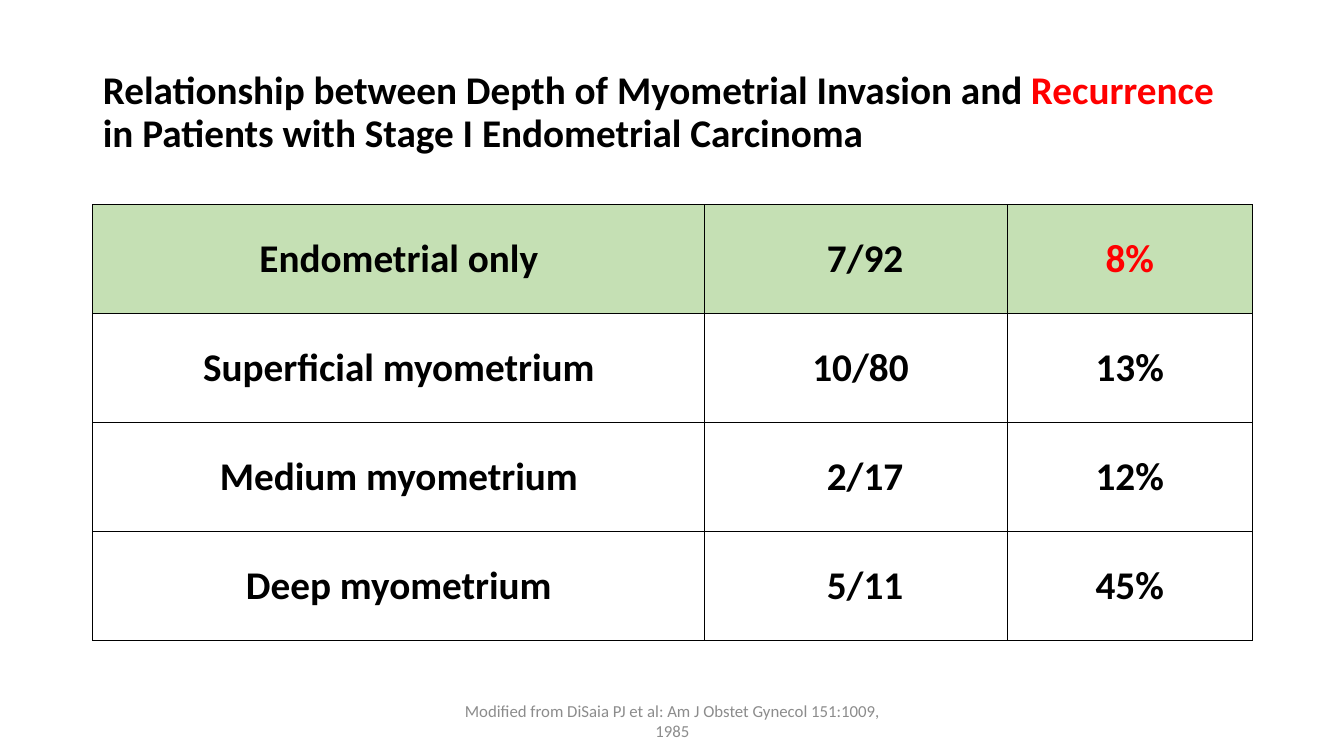
"""Build a slide with a table of recurrence by depth of myometrial invasion."""
from dataclasses import dataclass

from lxml.etree import SubElement
from pptx import Presentation
from pptx.dml.color import RGBColor as Color
from pptx.enum.text import MSO_ANCHOR as Anchor, MSO_AUTO_SIZE as AutoSize, PP_ALIGN as Align
from pptx.oxml.ns import qn
from pptx.util import Pt

PX = 9144


@dataclass(frozen=True)
class Theme:
    font: str = "Calibri"
    ink: str = "000000"
    accent: str = "FF0000"
    muted: str = "8C8C8C"
    highlight: str = "C5E0B4"
    main_size: int = 28
    source_size: int = 12
    border: float = 0.5


theme = Theme()


def add_text(para, text, color=theme.ink, size=theme.main_size, bold=True, align=Align.CENTER):
    para.alignment = align
    span = para.add_run()
    span.text = text
    span.font.name = theme.font
    span.font.size = Pt(size)
    span.font.bold = bold
    span.font.color.rgb = Color.from_string(color)


def add_borders(cell):
    properties = cell._tc.get_or_add_tcPr()
    for side in ("a:lnL", "a:lnR", "a:lnT", "a:lnB"):
        line = SubElement(properties, qn(side), w=str(Pt(theme.border)))
        fill = SubElement(line, qn("a:solidFill"))
        SubElement(fill, qn("a:srgbClr"), val=theme.ink)


deck = Presentation()
deck.slide_width, deck.slide_height = 1333 * PX, 750 * PX
page = deck.slides.add_slide(deck.slide_layouts[5])

title = page.shapes.title
title.left, title.top, title.width, title.height = 92 * PX, 40 * PX, 1150 * PX, 145 * PX
title.text_frame.word_wrap = True
title.text_frame.auto_size = AutoSize.NONE
title.text_frame.vertical_anchor = Anchor.MIDDLE
heading = title.text_frame.paragraphs[0]
heading.line_spacing = 0.9
for text, color in (
    ("Relationship between Depth of Myometrial Invasion and ", theme.ink),
    ("Recurrence", theme.accent),
    (" in Patients with Stage I Endometrial Carcinoma", theme.ink),
):
    add_text(heading, text, color=color, align=Align.LEFT)

source = page.shapes.add_textbox(442 * PX, 695 * PX, 450 * PX, 40 * PX)
source.text_frame.word_wrap = True
source.text_frame.vertical_anchor = Anchor.MIDDLE
add_text(
    source.text_frame.paragraphs[0],
    "Modified from DiSaia PJ et al: Am J Obstet Gynecol 151:1009, 1985",
    color=theme.muted, size=theme.source_size, bold=False,
)

recurrence = (
    ("Endometrial only", "7/92", "8%"),
    ("Superficial myometrium", "10/80", "13%"),
    ("Medium myometrium", "2/17", "12%"),
    ("Deep myometrium", "5/11", "45%"),
)
column_widths = (607, 300, 243)
row_height = 108
digit_indent = 9

table = page.shapes.add_table(
    len(recurrence), len(column_widths), 92 * PX, 203 * PX,
    sum(column_widths) * PX, len(recurrence) * row_height * PX,
).table
table.first_row = table.horz_banding = False
for column, width in zip(table.columns, column_widths):
    column.width = width * PX

for row_index, values in enumerate(recurrence):
    table.rows[row_index].height = row_height * PX
    for column_index, value in enumerate(values):
        cell = table.cell(row_index, column_index)
        indent = digit_indent * (6 - len(value)) if column_index == 1 else 0
        cell.margin_left = (1 + indent) * PX
        cell.margin_right = cell.margin_top = PX
        cell.margin_bottom = 0
        cell.vertical_anchor = Anchor.MIDDLE
        add_borders(cell)
        if row_index == 0:
            cell.fill.solid()
            cell.fill.fore_color.rgb = Color.from_string(theme.highlight)
        else:
            cell.fill.background()
        color = theme.accent if value == "8%" else theme.ink
        add_text(cell.text_frame.paragraphs[0], value, color=color)

deck.save("out.pptx")
